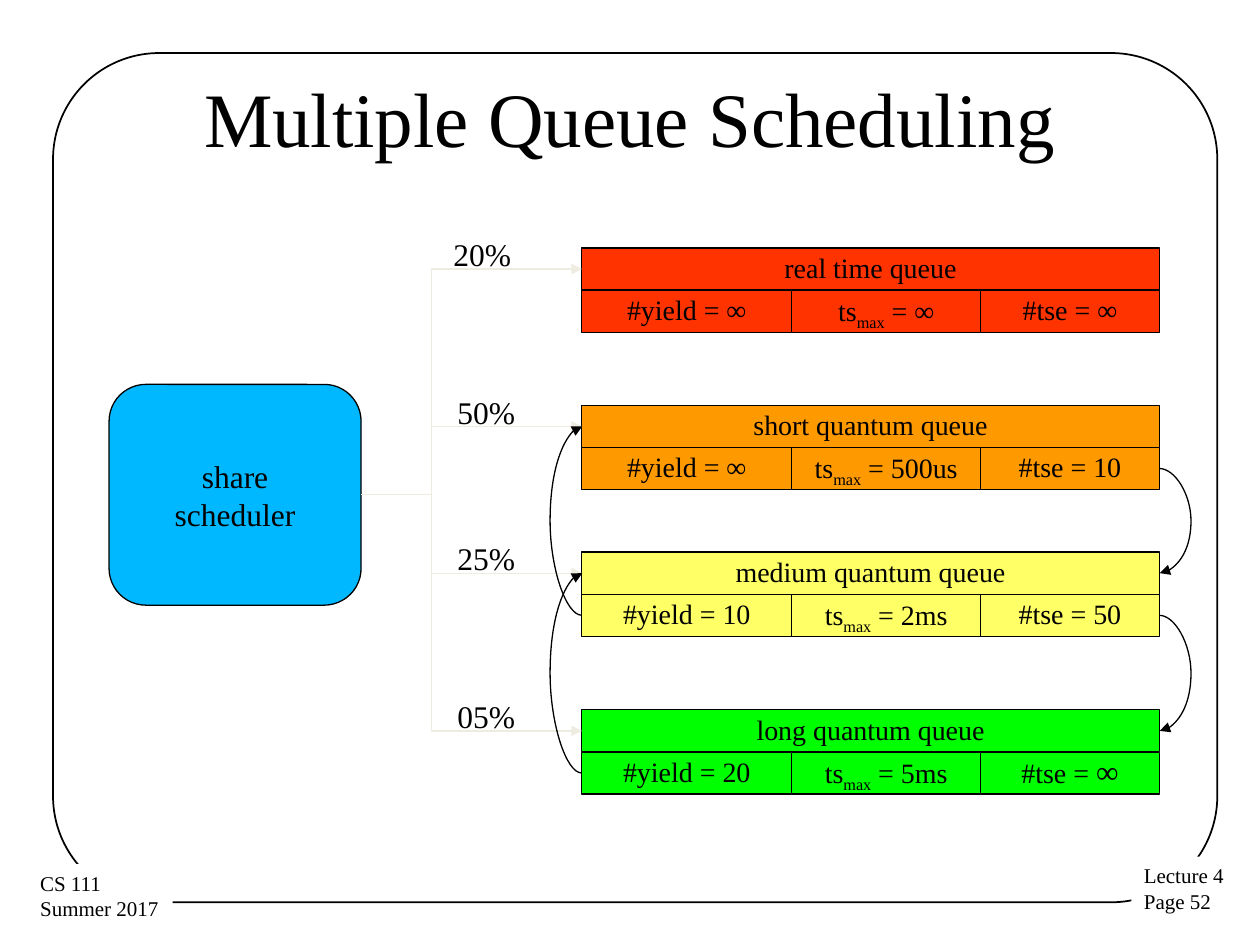
import dataclasses

import pptx
import pptx.dml.color
import pptx.enum.shapes
import pptx.enum.text
import pptx.oxml
import pptx.oxml.ns
import pptx.util

Cm, Pt = pptx.util.Cm, pptx.util.Pt
SHAPE = pptx.enum.shapes.MSO_SHAPE
CONNECTOR = pptx.enum.shapes.MSO_CONNECTOR
ALIGN = pptx.enum.text.PP_ALIGN
ANCHOR = pptx.enum.text.MSO_ANCHOR


@dataclasses.dataclass(frozen=True)
class Theme:
    font: str = "Times New Roman"
    ink: str = "000000"
    paper: str = "FFFFFF"
    scheduler: str = "00B8FF"
    branch: str = "EEECE1"
    title_size: int = 44
    label_size: int = 18
    cell_size: int = 16
    corner_size: int = 12
    thin: float = 0.75
    frame_line: float = 1


THEME = Theme()
TITLE = "Multiple Queue Scheduling"
CORNERS = [
    (("Lecture 4", "Page 52"), (22.81, 17.27, 2.16, 1.3)),
    (("CS 111", "Summer 2017"), (0.56, 17.42, 2.92, 1.3)),
]
SCHEDULER = ("share", "scheduler")
QUEUES = [
    dict(name="real time queue", share="20%", fill="FF3300", top=5, label_left=8.89,
         limits=("∞", "∞", "∞")),
    dict(name="short quantum queue", share="50%", fill="FF9900", top=8.17, label_left=8.97,
         limits=("∞", "500us", "10")),
    dict(name="medium quantum queue", share="25%", fill="FFFF66", top=11.13, label_left=8.97,
         limits=("10", "2ms", "50")),
    dict(name="long quantum queue", share="05%", fill="00FF00", top=14.31, label_left=8.97,
         limits=("20", "5ms", "∞")),
]
DEMOTIONS = [(1, 2), (2, 3)]
PROMOTIONS = [(3, 2), (2, 1)]

ROW = 0.85
LEFT = 11.73
WIDTHS = (4.23, 3.81, 3.6)
RIGHT = LEFT + sum(WIDTHS)
SCHEDULER_AREA = (2.2, 7.75, 5.08, 4.45)
BRANCH_BEND = 0.318
LOOP_REACH = 0.64
LOOP_WIDTH = 0.01


def color(value):
    return pptx.dml.color.RGBColor.from_string(value)


def write(box, lines, size, align=ALIGN.LEFT, anchor=ANCHOR.TOP, spacing=None, wrap=False):
    """Fill a box with lines, each a list of (text, baseline, size) spans."""
    frame = box.text_frame
    frame.word_wrap = wrap
    frame.vertical_anchor = anchor
    for number, spans in enumerate(lines):
        para = frame.add_paragraph() if number else frame.paragraphs[0]
        para.alignment = align
        para.line_spacing = spacing
        para.font.name = THEME.font
        para.font.size = Pt(size)
        para.font.color.rgb = color(THEME.ink)
        for text, baseline, span_size in spans:
            span = para.add_run()
            span.text = text
            if span_size:
                span.font.size = Pt(span_size)
            if baseline:
                span._r.get_or_add_rPr().set("baseline", str(baseline))


def plain(*texts):
    return [[(text, None, None)] for text in texts]


def add_box(page, kind, area, fill=None, line=None, width=THEME.thin):
    box = page.shapes.add_shape(kind, *map(Cm, area))
    box.shadow.inherit = False
    if fill:
        box.fill.solid()
        box.fill.fore_color.rgb = color(fill)
    else:
        box.fill.background()
    if line:
        box.line.color.rgb = color(line)
        box.line.width = Pt(width)
    else:
        box.line.fill.background()
    return box


def add_arrow(page, kind, start, end, line, bend):
    arrow = page.shapes.add_connector(kind, *map(Cm, start + end))
    arrow.line.color.rgb = color(line)
    arrow.line.width = Pt(THEME.thin)
    properties = arrow._element.spPr
    namespace = pptx.oxml.ns.nsdecls("a")
    arrow.line._get_or_add_ln().append(
        pptx.oxml.parse_xml(f'<a:tailEnd {namespace} type="triangle"/>'))
    properties.append(pptx.oxml.parse_xml(f"<a:effectLst {namespace}/>"))
    guides = properties.find(pptx.oxml.ns.qn("a:prstGeom")).get_or_add_avLst()
    guides.append(pptx.oxml.parse_xml(
        f'<a:gd {namespace} name="adj1" fmla="val {round(bend * 100000)}"/>'))


def add_queue(page, queue):
    fill, top = queue["fill"], queue["top"]
    yields, slice_limit, expiries = queue["limits"]
    last = fill == QUEUES[-1]["fill"]
    tse = [("#tse = ", None, None), (expiries, None, THEME.label_size if last else None)]
    slice_spans = [("ts", None, None), ("max", -25000, None), (f" = {slice_limit}", None, None)]
    cells = [((LEFT, top, sum(WIDTHS), ROW), plain(queue["name"]))]
    rows = [plain(f"#yield = {yields}"), [slice_spans], [tse]]
    for column, lines in enumerate(rows):
        left = LEFT + sum(WIDTHS[:column])
        cells.append(((left, top + ROW, WIDTHS[column], ROW), lines))
    for area, lines in cells:
        box = add_box(page, SHAPE.RECTANGLE, area, fill, THEME.ink)
        write(box, lines, THEME.cell_size, ALIGN.CENTER, ANCHOR.MIDDLE, 0.93)


def add_loops(page, moves, x, reach):
    for source, target in moves:
        start = (x, QUEUES[source]["top"] + 1.5 * ROW)
        end = (x + LOOP_WIDTH, QUEUES[target]["top"] + 0.5 * ROW)
        add_arrow(page, CONNECTOR.CURVE, start, end, THEME.ink, reach / LOOP_WIDTH)


def main():
    deck = pptx.Presentation()
    deck.slide_width, deck.slide_height = Cm(25.4), Cm(19.05)
    page = deck.slides.add_slide(deck.slide_layouts[6])

    frame = add_box(page, SHAPE.ROUNDED_RECTANGLE, (1.07, 1.07, 23.47, 17.12),
                    line=THEME.ink, width=THEME.frame_line)
    frame.adjustments[0] = 0.125
    for texts, area in CORNERS:
        corner = add_box(page, SHAPE.RECTANGLE, area, THEME.paper)
        write(corner, plain(*texts), THEME.corner_size)
    title = page.shapes.add_textbox(*map(Cm, (1.27, 0.76, 22.86, 3.18)))
    write(title, plain(TITLE), THEME.title_size, ALIGN.CENTER, ANCHOR.MIDDLE, wrap=True)

    for queue in QUEUES:
        add_queue(page, queue)
    scheduler = add_box(page, SHAPE.FLOWCHART_ALTERNATE_PROCESS, SCHEDULER_AREA,
                        THEME.scheduler, THEME.ink)
    write(scheduler, plain(*SCHEDULER), THEME.label_size, ALIGN.CENTER, ANCHOR.MIDDLE)

    left, top, width, height = SCHEDULER_AREA
    for queue in QUEUES:
        add_arrow(page, CONNECTOR.ELBOW, (left + width, top + height / 2),
                  (LEFT, queue["top"] + ROW / 2), THEME.branch, BRANCH_BEND)
    for queue in QUEUES:
        area = (queue["label_left"], queue["top"] - 0.38, 1.68, 1.02)
        label = page.shapes.add_textbox(*map(Cm, area))
        write(label, plain(queue["share"]), THEME.label_size)
    add_loops(page, DEMOTIONS, RIGHT, LOOP_REACH)
    add_loops(page, PROMOTIONS, LEFT, -LOOP_REACH)

    deck.save("out.pptx")


if __name__ == "__main__":
    main()
